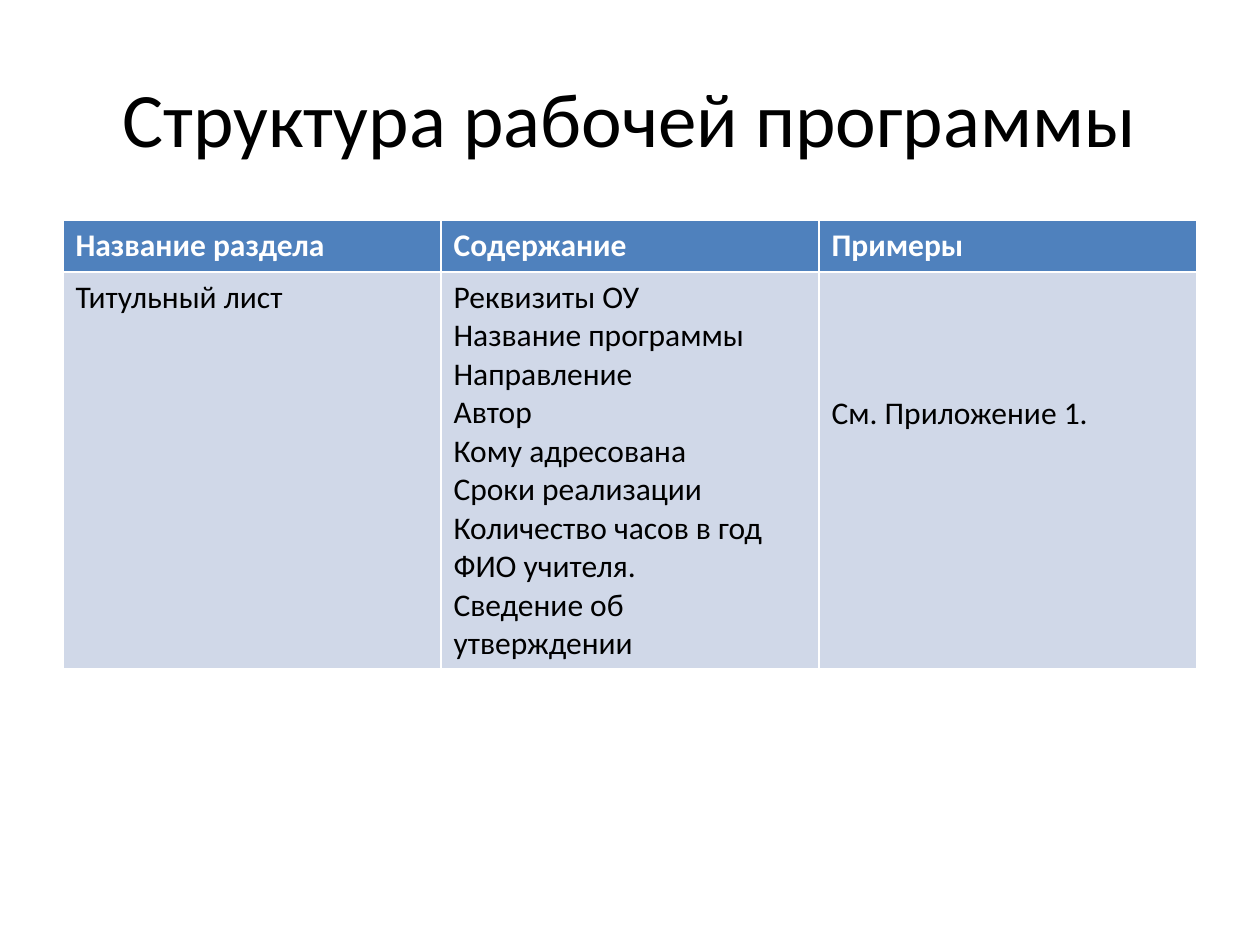
from pptx import Presentation
from pptx.dml.color import RGBColor
from pptx.enum.text import MSO_ANCHOR, PP_ALIGN
from pptx.util import Inches, Pt

HEADINGS = ["Название раздела", "Содержание", "Примеры"]
TITLE_PAGE = [
    ["Титульный лист"],
    [
        "Реквизиты ОУ",
        "Название программы",
        "Направление",
        "Автор",
        "Кому адресована",
        "Сроки реализации",
        "Количество часов в год",
        "ФИО учителя.",
        "Сведение об утверждении",
    ],
    ["См. Приложение 1."],
]


def color(value):
    return RGBColor.from_string(value)


def write(frame, lines, size=18, ink="000000", bold=False, align=PP_ALIGN.LEFT, font="Calibri"):
    """Fill a text frame with one paragraph per line."""
    for index, line in enumerate(lines):
        para = frame.add_paragraph() if index else frame.paragraphs[0]
        para.alignment = align
        span = para.add_run()
        span.text = line
        span.font.name = font
        span.font.size = Pt(size)
        span.font.bold = bold
        span.font.color.rgb = color(ink)


class SlideBuilder:
    header_fill = "4F81BD"
    header_ink = "FFFFFF"
    body_fill = "D0D8E8"
    left, width = 0.5, 9

    def __init__(self, page):
        self.page = page

    def title(self, text, top, height):
        box = self.page.shapes.title
        box.left, box.top = Inches(self.left), Inches(top)
        box.width, box.height = Inches(self.width), Inches(height)
        box.text_frame.vertical_anchor = MSO_ANCHOR.MIDDLE
        write(box.text_frame, [text], size=44, align=PP_ALIGN.CENTER)

    def table(self, headings, body, top, row_heights):
        table = self.page.shapes.add_table(
            2, len(headings), Inches(self.left), Inches(top),
            Inches(self.width), Inches(sum(row_heights)),
        ).table
        for row, height in zip(table.rows, row_heights):
            row.height = Inches(height)
        for index, (heading, lines) in enumerate(zip(headings, body)):
            self.cell(table.cell(0, index), [heading], self.header_fill,
                      ink=self.header_ink, bold=True)
            self.cell(table.cell(1, index), lines, self.body_fill)
        return table

    def cell(self, cell, lines, fill, **text_format):
        cell.fill.solid()
        cell.fill.fore_color.rgb = color(fill)
        write(cell.text_frame, lines, **text_format)


def main():
    deck = Presentation()
    deck.slide_width, deck.slide_height = Inches(10), Inches(7.5)
    builder = SlideBuilder(deck.slides.add_slide(deck.slide_layouts[5]))
    builder.title("Структура рабочей программы", top=0.3, height=1.25)
    table = builder.table(HEADINGS, TITLE_PAGE, top=1.75, row_heights=[0.41, 3.1])
    # The example stands level with the fourth line of the contents.
    table.cell(1, 2).margin_top = Inches(0.97)
    deck.save("out.pptx")


if __name__ == "__main__":
    main()
